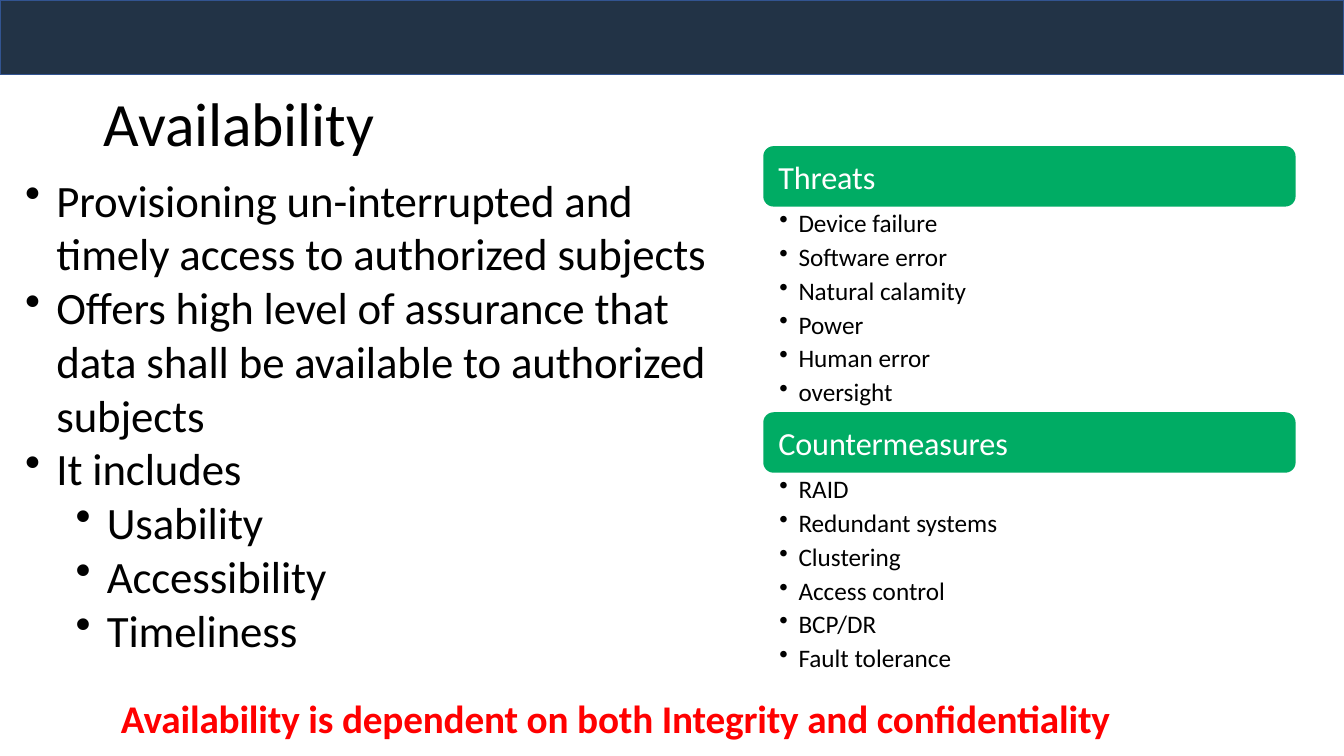
from pptx import Presentation
from pptx.dml.color import RGBColor
from pptx.enum.shapes import MSO_SHAPE
from pptx.enum.text import MSO_ANCHOR, PP_ALIGN
from pptx.oxml import parse_xml
from pptx.oxml.ns import nsdecls
from pptx.util import Pt

PX = 9144
FONT = "Calibri"
RECT, ROUNDED = MSO_SHAPE.RECTANGLE, MSO_SHAPE.ROUNDED_RECTANGLE
TOP, MIDDLE = MSO_ANCHOR.TOP, MSO_ANCHOR.MIDDLE
LEFT = PP_ALIGN.LEFT
COLORS = {
    "banner": "223346",
    "banner_line": "325491",
    "panel": "00AC64",
    "white": "FFFFFF",
    "black": "000000",
    "red": "FF0000",
}
POINTS = [
    (0, "Provisioning un-interrupted and timely access to authorized subjects"),
    (0, "Offers high level of assurance that data shall be available to authorized subjects"),
    (0, "It includes"),
    (1, "Usability"),
    (1, "Accessibility"),
    (1, "Timeliness"),
]
PANELS = [
    ("Threats", ["Device failure", "Software error", "Natural calamity",
                 "Power", "Human error", "oversight"]),
    ("Countermeasures", ["RAID", "Redundant systems", "Clustering",
                         "Access control", "BCP/DR", "Fault tolerance"]),
]


def emu(*lengths):
    """Turn px lengths into EMU."""
    return [length * PX for length in lengths]


def rgb(name):
    """Look up a named colour."""
    return RGBColor.from_string(COLORS[name])


def set_frame(s, anchor=TOP, inset=0):
    """Set wrapping, anchor and margins, and return the text frame."""
    tf = s.text_frame
    left, top = emu(inset, 1)
    values = {"word_wrap": True, "vertical_anchor": anchor, "margin_left": left,
              "margin_top": top, "margin_right": 0, "margin_bottom": 0}
    for name, value in values.items():
        setattr(tf, name, value)
    return tf


def write(p, text, size, color, bold=False, spacing=-10):
    """Write one formatted run into a paragraph."""
    p.alignment = LEFT
    r = p.add_run()
    r.text = text
    values = {"name": FONT, "size": Pt(size), "bold": bold}
    for name, value in values.items():
        setattr(r.font, name, value)
    r.font.color.rgb = rgb(color)
    r.font._element.set("spc", str(spacing))


def set_bullet(p, margin, hang):
    """Give a paragraph a round bullet with a hanging indent."""
    pPr = p._p.get_or_add_pPr()
    pPr.set("marL", str(margin * PX))
    pPr.set("indent", str(-hang * PX))
    pPr.append(parse_xml(f'<a:buChar {nsdecls("a")} char="•"/>'))


def add_box(slide, kind, box, fill, line=None):
    """Add a filled preset shape."""
    s = slide.shapes.add_shape(kind, *emu(*box))
    s.shadow.inherit = False
    s.fill.solid()
    s.fill.fore_color.rgb = rgb(fill)
    if line:
        s.line.color.rgb = rgb(line)
        s.line.width = Pt(1)
    else:
        s.line.fill.background()
    return s


def add_list(slide, box, items, size, margins, hang, gap=0, spacing=-10):
    """Add a bulleted list of (level, text) items."""
    tf = set_frame(slide.shapes.add_textbox(*emu(*box)))
    for i, (level, text) in enumerate(items):
        p = tf.add_paragraph() if i else tf.paragraphs[0]
        set_bullet(p, margins[level], hang)
        p.level = level
        p.space_before = Pt(gap if i else 0)
        write(p, text, size, "black", spacing=spacing)


def add_panel(slide, top, heading, items):
    """Add a heading bar with its list below."""
    s = add_box(slide, ROUNDED, (757, top, 528, 60), "panel")
    s.adjustments[0] = 0.17
    tf = set_frame(s, MIDDLE, 12)
    write(tf.paragraphs[0], heading, 23, "white")
    add_list(slide, (768, top + 60, 517, 202), [(0, text) for text in items],
             18, [24], 19, 2.5, 0)


def add_title(slide, text):
    """Place and format the title."""
    s = slide.shapes.title
    s.left, s.top, s.width, s.height = emu(103, 83, 416, 75)
    tf = set_frame(s, MIDDLE)
    write(tf.paragraphs[0], text, 44, "black")


def main():
    """Build the slide."""
    prs = Presentation()
    prs.slide_width, prs.slide_height = emu(1333, 750)
    slide = prs.slides.add_slide(prs.slide_layouts[5])
    add_box(slide, RECT, (0, 0, 1333, 74), "banner", "banner_line")
    add_title(slide, "Availability")
    for i, (heading, items) in enumerate(PANELS):
        add_panel(slide, 145 + 264 * i, heading, items)
    add_list(slide, (23, 170, 683, 483), POINTS, 32, [33, 83], 31)
    tf = set_frame(slide.shapes.add_textbox(*emu(120, 688, 995, 49)))
    write(tf.paragraphs[0],
          "Availability is dependent on both Integrity and confidentiality",
          28, "red", bold=True)
    prs.save("out.pptx")


if __name__ == "__main__":
    main()
